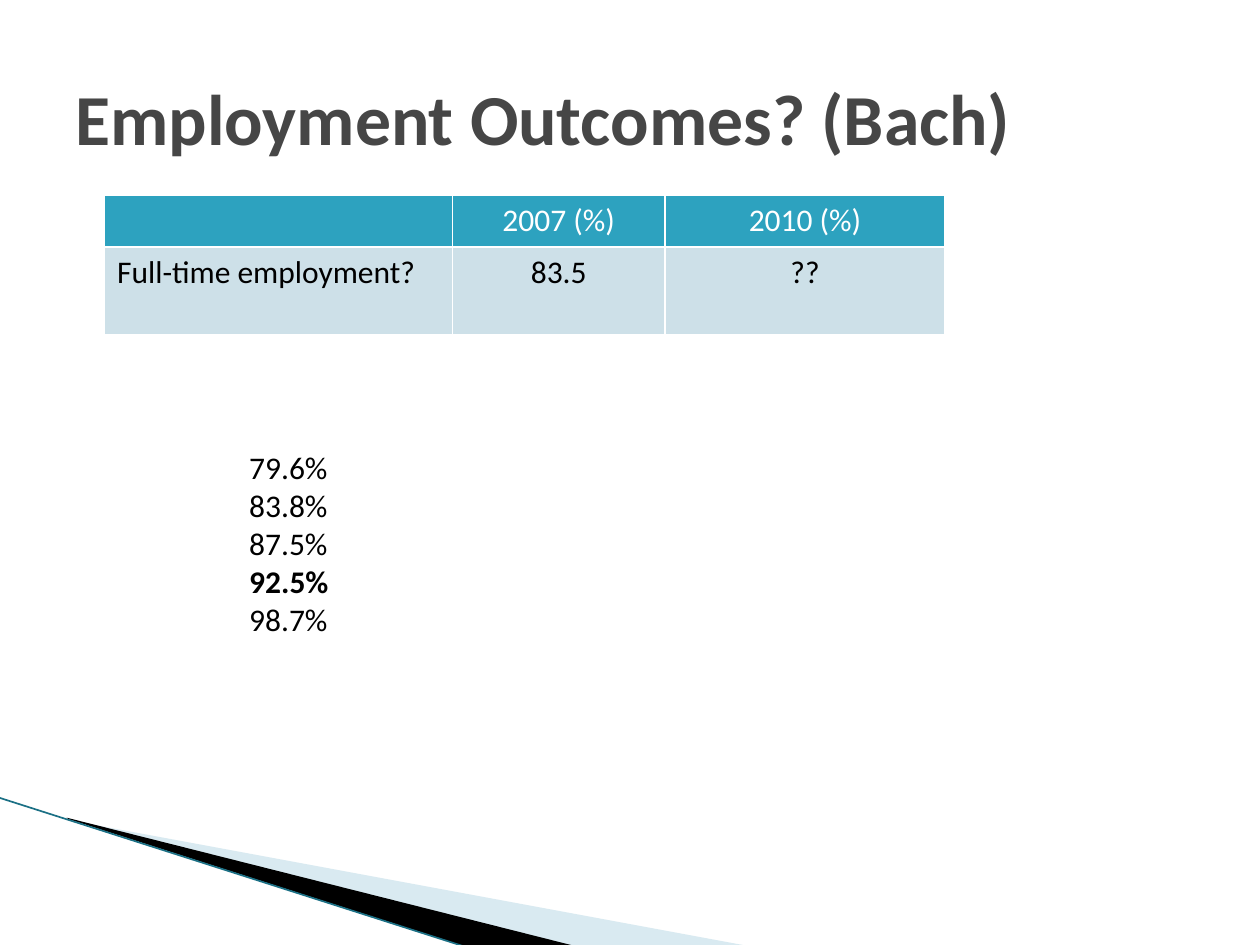
import dataclasses

import lxml.etree
import pptx
import pptx.dml.color
import pptx.enum.shapes
import pptx.enum.text
import pptx.oxml
import pptx.oxml.ns
import pptx.slide
import pptx.table
import pptx.text.text
import pptx.util

Inches = pptx.util.Inches
qn = pptx.oxml.ns.qn
FONT = "Calibri"
COLORS = {
    "title": "464646",
    "text": "000000",
    "white": "FFFFFF",
    "header": "2DA2BF",
    "body": "CDE0E8",
    "wedge_light": "A0CBDC",
    "wedge_dark": "000000",
    "edge": "1B7085",
}


@dataclasses.dataclass
class Wedge:
    points: list[tuple[float, float]]
    color: str
    opacity: int = 100


@dataclasses.dataclass
class Line:
    text: str
    bold: bool = False


WEDGES = [
    Wedge([(0.55, 6.51), (5.95, 7.51), (4.56, 7.51), (0.55, 6.5)], "wedge_light", 40),
    Wedge([(0.53, 6.49), (4.57, 7.51), (3.72, 7.52), (0.54, 6.5)], "wedge_dark"),
]
RATES = [Line("79.6%"), Line("83.8%"), Line("87.5%"), Line("92.5%", True), Line("98.7%")]
TABLE_ROWS = [["", "2007 (%)", "2010 (%)"], ["Full-time employment?", "83.5", "??"]]
COLUMN_WIDTHS = [2.76, 1.69, 2.22]
ROW_HEIGHTS = [0.41, 0.7]


def rgb(name: str) -> pptx.dml.color.RGBColor:
    """Return a named colour."""
    return pptx.dml.color.RGBColor.from_string(COLORS[name])


def add_run(p: pptx.text.text._Paragraph, text: str, size: float, color: str, bold: bool = False) -> None:
    """Append one formatted run."""
    r = p.add_run()
    r.text = text
    r.font.name = FONT
    r.font.size = pptx.util.Pt(size)
    r.font.bold = bold
    r.font.color.rgb = rgb(color)


def add_wedge(s: pptx.slide.Slide, wedge: Wedge) -> None:
    """Draw a filled outline without a border."""
    points = [(Inches(x), Inches(y)) for x, y in wedge.points]
    builder = s.shapes.build_freeform(*points[0])
    builder.add_line_segments(points[1:], close=True)
    sp = builder.convert_to_shape()
    sp.shadow.inherit = False
    sp.fill.solid()
    sp.fill.fore_color.rgb = rgb(wedge.color)
    sp.line.fill.background()
    if wedge.opacity < 100:
        color = sp._element.spPr.find(".//" + qn("a:srgbClr"))
        lxml.etree.SubElement(color, qn("a:alpha"), val=str(wedge.opacity * 1000))


def add_edge(s: pptx.slide.Slide) -> None:
    """Draw the thin line along the wedges."""
    line = s.shapes.add_connector(
        pptx.enum.shapes.MSO_CONNECTOR.STRAIGHT,
        Inches(-0.01), Inches(6.33), Inches(3.71), Inches(7.52),
    )
    line.line.color.rgb = rgb("edge")
    line.line.width = pptx.util.Pt(0.95)
    lxml.etree.SubElement(line._element.spPr, qn("a:effectLst"))


def add_title(s: pptx.slide.Slide) -> None:
    """Write the slide title."""
    tf = s.shapes.add_textbox(Inches(0.5), Inches(0.3), Inches(9), Inches(1.25)).text_frame
    tf.word_wrap = True
    tf.vertical_anchor = pptx.enum.text.MSO_ANCHOR.MIDDLE
    add_run(tf.paragraphs[0], "Employment Outcomes? (Bach)", 41, "title", True)


def add_rates(s: pptx.slide.Slide) -> None:
    """Write the indented list of rates."""
    tf = s.shapes.add_textbox(Inches(1.38), Inches(3.51), Inches(5), Inches(1.62)).text_frame
    tf.word_wrap = True
    tf.auto_size = pptx.enum.text.MSO_AUTO_SIZE.SHAPE_TO_FIT_TEXT
    for i, rate in enumerate(RATES):
        p = tf.add_paragraph() if i else tf.paragraphs[0]
        p.level = 1
        pPr = p._p.get_or_add_pPr()
        pPr.set("marL", str(Inches(0.5)))
        pPr.set("indent", "0")
        add_run(p, rate.text, 18, "text", rate.bold)


def add_borders(cell: pptx.table._Cell) -> None:
    """Give a cell thin white borders on all sides."""
    tcPr = cell._tc.get_or_add_tcPr()
    for i, side in enumerate(("a:lnL", "a:lnR", "a:lnT", "a:lnB")):
        ln = pptx.oxml.parse_xml(
            f'<{side} xmlns:a="{pptx.oxml.ns.nsdecls("a").split(chr(34))[1]}" w="{pptx.util.Pt(1)}">'
            f'<a:solidFill><a:srgbClr val="{COLORS["white"]}"/></a:solidFill></{side}>'
        )
        tcPr.insert(i, ln)


def add_outcomes(s: pptx.slide.Slide) -> None:
    """Build the employment table."""
    table = s.shapes.add_table(
        len(ROW_HEIGHTS), len(COLUMN_WIDTHS), Inches(0.83), Inches(1.55),
        Inches(sum(COLUMN_WIDTHS)), Inches(sum(ROW_HEIGHTS)),
    ).table
    for column, width in zip(table.columns, COLUMN_WIDTHS):
        column.width = Inches(width)
    for row, height in zip(table.rows, ROW_HEIGHTS):
        row.height = Inches(height)
    for i, texts in enumerate(TABLE_ROWS):
        for j, text in enumerate(texts):
            cell = table.cell(i, j)
            cell.fill.solid()
            cell.fill.fore_color.rgb = rgb("body" if i else "header")
            add_borders(cell)
            p = cell.text_frame.paragraphs[0]
            if j:
                p.alignment = pptx.enum.text.PP_ALIGN.CENTER
            if text:
                add_run(p, text, 18, "text" if i else "white")


def main() -> None:
    """Build and save the slide."""
    prs = pptx.Presentation()
    prs.slide_width, prs.slide_height = Inches(10), Inches(7.5)
    s = prs.slides.add_slide(prs.slide_layouts[6])
    for wedge in WEDGES:
        add_wedge(s, wedge)
    add_edge(s)
    add_title(s)
    add_rates(s)
    add_outcomes(s)
    prs.save("out.pptx")


if __name__ == "__main__":
    main()
